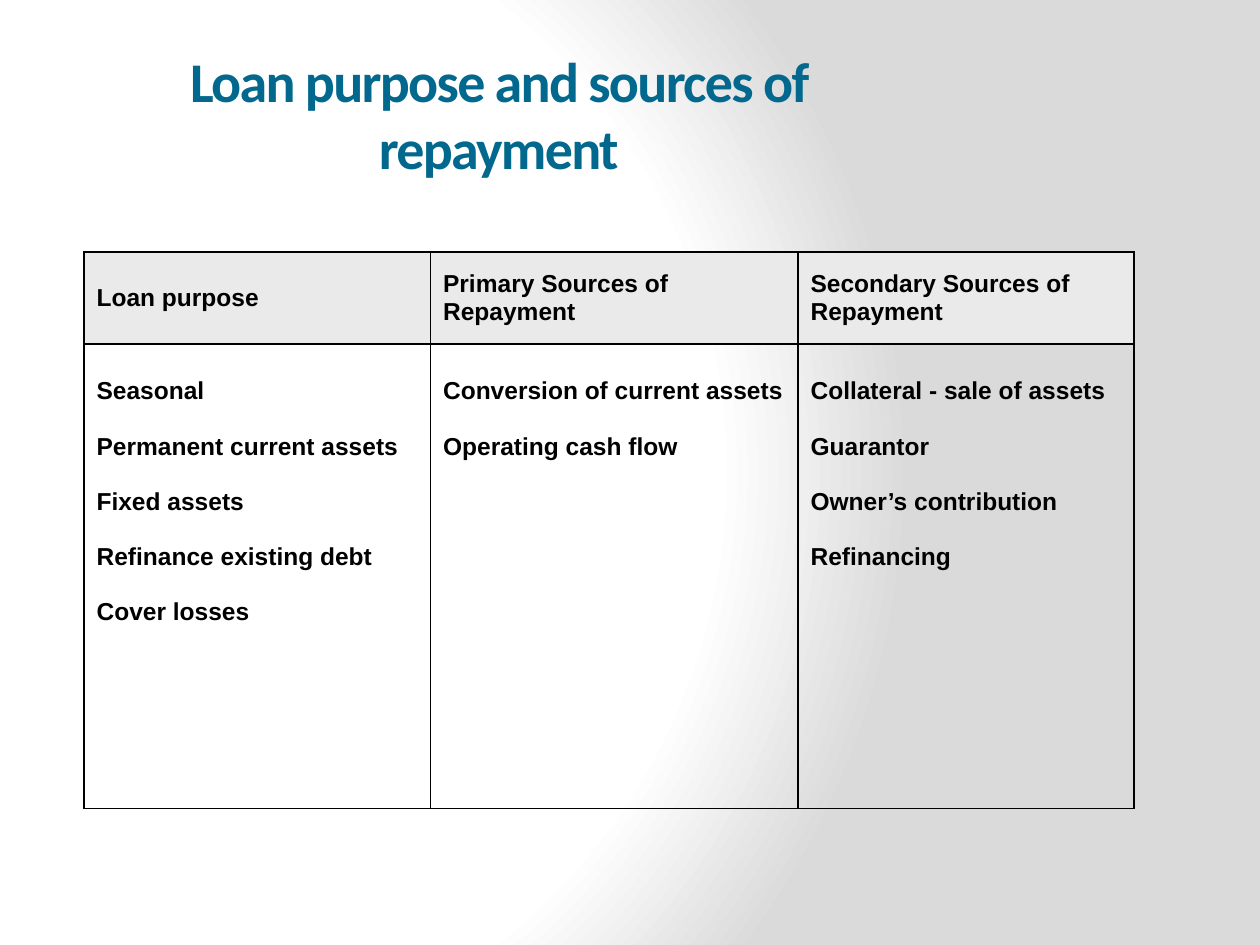
import pptx
import pptx.util
import pptx.dml.color
import pptx.enum.text
import pptx.oxml
import pptx.oxml.ns

Pt = pptx.util.Pt
ALIGN = pptx.enum.text.PP_ALIGN
ANCHOR = pptx.enum.text.MSO_ANCHOR
NS = pptx.oxml.ns.nsdecls("a", "p")

TITLE = "Loan purpose and sources of repayment"
COLUMNS = [
    ("Loan purpose", 198,
     ["Seasonal", "Permanent current assets", "Fixed assets",
      "Refinance existing debt", "Cover losses"]),
    ("Primary Sources of Repayment", 210,
     ["Conversion of current assets", "Operating cash flow"]),
    ("Secondary Sources of Repayment", 192,
     ["Collateral - sale of assets", "Guarantor",
      "Owner’s contribution", "Refinancing"]),
]
ROW_HEIGHTS = [52.5, 265.5]
TABLE_LEFT, TABLE_TOP = 48, 144
ITEM_GAP = 15.75
CELL_MARGIN = 3.6

TITLE_FONT = {"name": "Calibri", "size": Pt(32), "bold": True}
CELL_FONT = {"name": "Arial", "size": Pt(14), "bold": True}
GRADIENT = [(0, "FFFFFF"), (75, "FFFFFF"), (100, "DADADA")]


def rgb(value):
    return pptx.dml.color.RGBColor.from_string(value)


def add_run(p, text, font, color):
    r = p.add_run()
    r.text = text
    for key, value in font.items():
        setattr(r.font, key, value)
    r.font.color.rgb = rgb(color)
    return r


def set_background(s):
    stops = "".join(
        f'<a:gs pos="{pos * 1000}"><a:srgbClr val="{color}"/></a:gs>'
        for pos, color in GRADIENT)
    bg = pptx.oxml.parse_xml(
        f'<p:bg {NS}><p:bgPr><a:gradFill rotWithShape="1">'
        f'<a:gsLst>{stops}</a:gsLst><a:path path="circle">'
        '<a:fillToRect l="20000" t="50000" r="100000" b="50000"/></a:path>'
        '</a:gradFill><a:effectLst/></p:bgPr></p:bg>')
    s.element.cSld.insert(0, bg)


def set_borders(cell):
    tcPr = cell._tc.get_or_add_tcPr()
    for i, side in enumerate("LRTB"):
        tcPr.insert(i, pptx.oxml.parse_xml(
            f'<a:ln{side} {NS} w="{Pt(1)}"><a:solidFill>'
            f'<a:srgbClr val="000000"/></a:solidFill></a:ln{side}>'))


def add_title(s):
    sp = s.shapes.add_textbox(Pt(36), Pt(21.6), Pt(498), Pt(86.4))
    tf = sp.text_frame
    tf.word_wrap = True
    tf.vertical_anchor = ANCHOR.MIDDLE
    p = tf.paragraphs[0]
    p.alignment = ALIGN.CENTER
    r = add_run(p, TITLE, TITLE_FONT, "02688D")
    r._r.get_or_add_rPr().set("spc", "-100")


def add_loan_table(s):
    width = sum(column[1] for column in COLUMNS)
    table = s.shapes.add_table(
        len(ROW_HEIGHTS), len(COLUMNS), Pt(TABLE_LEFT), Pt(TABLE_TOP),
        Pt(width), Pt(sum(ROW_HEIGHTS))).table
    table.first_row = table.horz_banding = False
    for row, height in zip(table.rows, ROW_HEIGHTS):
        row.height = Pt(height)
    for j, (heading, column_width, items) in enumerate(COLUMNS):
        table.columns[j].width = Pt(column_width)
        head, body = table.cell(0, j), table.cell(1, j)
        head.vertical_anchor = ANCHOR.MIDDLE
        head.fill.solid()
        head.fill.fore_color.rgb = rgb("EAEAEA")
        body.fill.background()
        body.margin_top = Pt(CELL_MARGIN + ITEM_GAP)
        for cell, lines in ((head, [heading]), (body, items)):
            set_borders(cell)
            tf = cell.text_frame
            for i, line in enumerate(lines):
                p = tf.add_paragraph() if i else tf.paragraphs[0]
                if i:
                    p.space_before = Pt(ITEM_GAP)
                add_run(p, line, CELL_FONT, "000000")


def main():
    prs = pptx.Presentation()
    prs.slide_width, prs.slide_height = Pt(720), Pt(540)
    s = prs.slides.add_slide(prs.slide_layouts[6])
    set_background(s)
    add_title(s)
    add_loan_table(s)
    prs.save("out.pptx")


if __name__ == "__main__":
    main()
